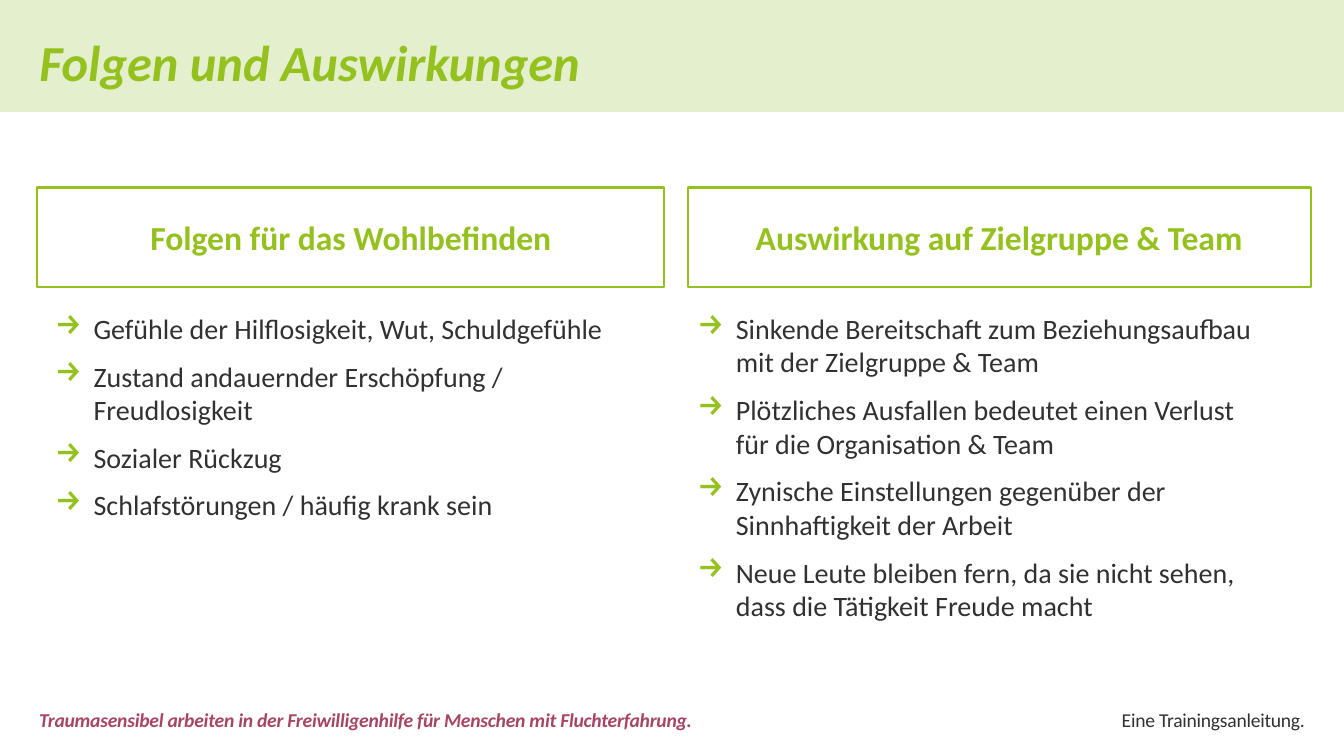
from lxml import etree
from pptx import Presentation
from pptx.dml.color import RGBColor
from pptx.enum.shapes import MSO_SHAPE
from pptx.enum.text import MSO_ANCHOR, MSO_AUTO_SIZE, PP_ALIGN
from pptx.oxml.ns import qn
from pptx.util import Inches, Pt

GREEN = RGBColor(0x95, 0xC1, 0x1F)
PALE = RGBColor(0xE4, 0xEF, 0xCE)
WHITE = RGBColor(0xFF, 0xFF, 0xFF)
DARK = RGBColor(0x31, 0x31, 0x31)
PLUM = RGBColor(0xA7, 0x46, 0x62)
RECT = MSO_SHAPE.RECTANGLE
MIDDLE = MSO_ANCHOR.MIDDLE
FIT = MSO_AUTO_SIZE.SHAPE_TO_FIT_TEXT
FIXED = MSO_AUTO_SIZE.NONE
LEFT, CENTER, RIGHT = PP_ALIGN.LEFT, PP_ALIGN.CENTER, PP_ALIGN.RIGHT


def style(para, size, color, bold=False, italic=False):
    for run in para.runs:
        font = run.font
        font.name = "Calibri"
        font.size = Pt(size)
        font.color.rgb = color
        font.bold = bold
        font.italic = italic


def add_bullet(para):
    props = para._p.get_or_add_pPr()
    props.set("marL", str(Inches(0.38)))
    props.set("indent", str(-Inches(0.38)))
    tint = etree.SubElement(props, qn("a:buClr"))
    etree.SubElement(tint, qn("a:srgbClr"), val=str(GREEN))
    etree.SubElement(props, qn("a:buSzPct"), val="120000")
    etree.SubElement(props, qn("a:buChar"), char="→")


prs = Presentation()
prs.slide_width = Inches(13.33)
prs.slide_height = Inches(7.5)
slide = prs.slides.add_slide(prs.slide_layouts[5])
shapes = slide.shapes

band = shapes.add_shape(RECT, 0, 0, prs.slide_width, Inches(1.11))
band.shadow.inherit = False
band.fill.solid()
band.fill.fore_color.rgb = PALE
band.line.fill.background()

title = shapes.title
title.element.addprevious(band.element)
title.left, title.top = Inches(0.29), Inches(0.24)
title.width, title.height = Inches(12.73), Inches(0.89)
frame = title.text_frame
frame.text = "Folgen und Auswirkungen"
frame.auto_size = FIXED
frame.vertical_anchor = MIDDLE
head = frame.paragraphs[0]
head.alignment = LEFT
head.line_spacing = Pt(32)
style(head, 36, GREEN, bold=True, italic=True)

columns = [
    (0.37, 6.22, 0.45, 6.14, "Folgen für das Wohlbefinden", [
        "Gefühle der Hilflosigkeit, Wut, Schuldgefühle",
        "Zustand andauernder Erschöpfung /\vFreudlosigkeit",
        "Sozialer Rückzug",
        "Schlafstörungen / häufig krank sein",
    ]),
    (6.82, 6.18, 6.82, 6.19, "Auswirkung auf Zielgruppe & Team", [
        "Sinkende Bereitschaft zum Beziehungsaufbau\vmit der Zielgruppe & Team",
        "Plötzliches Ausfallen bedeutet einen Verlust\vfür die Organisation & Team",
        "Zynische Einstellungen gegenüber der\vSinnhaftigkeit der Arbeit",
        "Neue Leute bleiben fern, da sie nicht sehen,\vdass die Tätigkeit Freude macht",
    ]),
]
for box_x, box_w, list_x, list_w, label, items in columns:
    box = shapes.add_shape(RECT, Inches(box_x), Inches(1.86), Inches(box_w), Inches(0.99))
    box.shadow.inherit = False
    box.fill.solid()
    box.fill.fore_color.rgb = WHITE
    box.line.color.rgb = GREEN
    box.line.width = Pt(1.5)
    frame = box.text_frame
    frame.text = label
    frame.vertical_anchor = MIDDLE
    frame.paragraphs[0].alignment = CENTER
    style(frame.paragraphs[0], 24, GREEN, bold=True)

    body = shapes.add_textbox(Inches(list_x), Inches(3.04), Inches(list_w), Inches(3.27))
    frame = body.text_frame
    frame.word_wrap = True
    for i, item in enumerate(items):
        para = frame.add_paragraph() if i else frame.paragraphs[0]
        para.text = item
        para.space_before = Pt(10)
        add_bullet(para)
        style(para, 20, DARK)

footers = [
    (0.29, 6.67, "Traumasensibel arbeiten in der Freiwilligenhilfe für Menschen mit Fluchterfahrung.",
     LEFT, PLUM, True),
    (10.99, 2.05, "Eine Trainingsanleitung.", RIGHT, DARK, False),
]
for x, width, text, align, color, strong in footers:
    note = shapes.add_textbox(Inches(x), Inches(6.97), Inches(width), Inches(0.34))
    frame = note.text_frame
    frame.text = text
    frame.word_wrap = False
    frame.auto_size = FIT
    para = frame.paragraphs[0]
    para.alignment = align
    style(para, 14, color, bold=strong, italic=strong)
    para.runs[0].font._element.set("spc", "-20")

prs.save("out.pptx")
